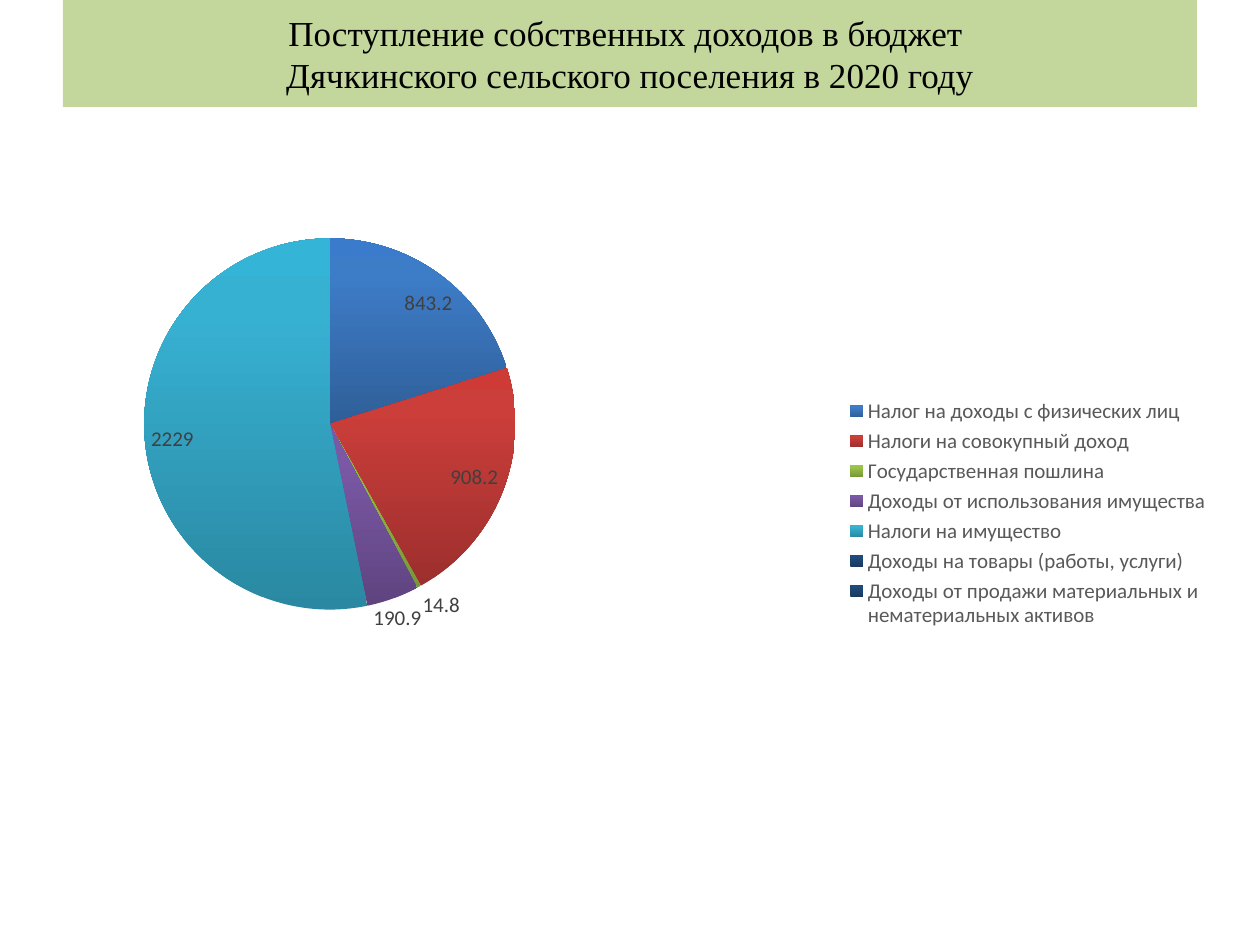
import copy

import pptx
import pptx.chart.data
import pptx.dml.color
import pptx.enum.chart
import pptx.enum.shapes
import pptx.enum.text
import pptx.oxml
import pptx.oxml.ns
import pptx.util

RGBColor = pptx.dml.color.RGBColor
PX = 914400 // 126

BLACK = RGBColor(0x00, 0x00, 0x00)
BANNER_GREEN = RGBColor(0xC3, 0xD6, 0x9B)
LABEL_GRAY = RGBColor(0x40, 0x40, 0x40)
LEGEND_GRAY = RGBColor(0x59, 0x59, 0x59)

# Each gradient runs from the bottom of the slice to its top.
BLUE = (RGBColor(0x2F, 0x5F, 0x99), RGBColor(0x3D, 0x7C, 0xC7), RGBColor(0x3A, 0x7C, 0xCB))
RED = (RGBColor(0x9C, 0x2F, 0x2D), RGBColor(0xCB, 0x3E, 0x3A), RGBColor(0xCE, 0x3B, 0x37))
GREEN = (RGBColor(0x77, 0x97, 0x37), RGBColor(0x9B, 0xC3, 0x48), RGBColor(0x9D, 0xC7, 0x46))
PURPLE = (RGBColor(0x5F, 0x44, 0x80), RGBColor(0x7B, 0x58, 0xA6), RGBColor(0x7C, 0x57, 0xA8))
CYAN = (RGBColor(0x2A, 0x88, 0xA2), RGBColor(0x37, 0xB1, 0xD2), RGBColor(0x34, 0xB4, 0xD6))
NAVY = (RGBColor(0x19, 0x39, 0x5F), RGBColor(0x20, 0x4A, 0x7C), RGBColor(0x1E, 0x4A, 0x7E))
STOP_POSITIONS = (0, 0.8, 1)

TITLE_LINES = (
    "Поступление собственных доходов в бюджет ",
    "Дячкинского сельского поселения в 2020 году",
)
INCOME = [
    ("Налог на доходы с физических лиц", 843.2, BLUE),
    ("Налоги на совокупный доход", 908.2, RED),
    ("Государственная пошлина ", 14.8, GREEN),
    ("Доходы от использования имущества", 190.9, PURPLE),
    ("Налоги на имущество", 2229, CYAN),
    ("Доходы на товары (работы, услуги)", 0, NAVY),
    ("Доходы от продажи материальных и \nнематериальных активов", None, NAVY),
]


def px(*lengths):
    return [n * PX for n in lengths]


def set_font(font, name, size, color):
    font.name = name
    font.size = pptx.util.Pt(size)
    font.color.rgb = color


def add_title(slide, lines):
    sp = slide.shapes.add_shape(
        pptx.enum.shapes.MSO_SHAPE.RECTANGLE, *px(63, 0, 1134, 107))
    sp.shadow.inherit = False
    sp.fill.solid()
    sp.fill.fore_color.rgb = BANNER_GREEN
    sp.line.fill.background()
    tf = sp.text_frame
    tf.vertical_anchor = pptx.enum.text.MSO_ANCHOR.MIDDLE
    p = tf.paragraphs[0]
    p.text = "\v".join(lines)
    p.alignment = pptx.enum.text.PP_ALIGN.CENTER
    set_font(p.font, "Times New Roman", 20, BLACK)


def fill_gradient(fill, colors):
    fill.gradient()
    fill.gradient_angle = 90
    first = fill.gradient_stops[0]._gs
    first.addnext(copy.deepcopy(first))
    for stop, position, color in zip(fill.gradient_stops, STOP_POSITIONS, colors):
        stop.position = position
        stop.color.rgb = color


def set_plot_layout(chart, x, y, w, h):
    """Place the inner plot area, in fractions of the chart."""
    plot_area = chart._chartSpace.chart.plotArea
    for old in plot_area.findall(pptx.oxml.ns.qn("c:layout")):
        plot_area.remove(old)
    values = (("layoutTarget", "inner"), ("xMode", "edge"), ("yMode", "edge"),
              ("x", x), ("y", y), ("w", w), ("h", h))
    items = "".join(f'<c:{tag} val="{val}"/>' for tag, val in values)
    plot_area.insert(0, pptx.oxml.parse_xml(
        f'<c:layout {pptx.oxml.ns.nsdecls("c")}>'
        f"<c:manualLayout>{items}</c:manualLayout></c:layout>"))


def add_income_pie(slide, income):
    data = pptx.chart.data.CategoryChartData()
    data.categories = [name for name, _, _ in income]
    data.add_series("Series 1", [value for _, value, _ in income])
    chart = slide.shapes.add_chart(
        pptx.enum.chart.XL_CHART_TYPE.PIE, *px(63, 107, 1160, 813), data).chart
    chart.has_title = False
    set_font(chart.font, "Calibri", 10, BLACK)
    set_plot_layout(chart, 0.07, 0.12, 0.32, 0.54)

    chart.has_legend = True
    chart.legend.position = pptx.enum.chart.XL_LEGEND_POSITION.RIGHT
    chart.legend.include_in_layout = False
    set_font(chart.legend.font, "Calibri", 12, LEGEND_GRAY)

    plot = chart.plots[0]
    plot.vary_by_categories = True
    series = plot.series[0]
    for i, (_, _, colors) in enumerate(income):
        fmt = series.points[i].format
        fill_gradient(fmt.fill, colors)
        fmt.line.fill.background()

    labels = series.data_labels
    labels.show_value = True
    labels.position = pptx.enum.chart.XL_LABEL_POSITION.BEST_FIT
    labels.number_format = '[=0]"";General'
    labels.number_format_is_linked = False
    set_font(labels.font, "Calibri", 12, LABEL_GRAY)


def main():
    prs = pptx.Presentation()
    prs.slide_width = pptx.util.Inches(10)
    prs.slide_height = pptx.util.Inches(7.5)
    slide = prs.slides.add_slide(prs.slide_layouts[6])
    add_title(slide, TITLE_LINES)
    add_income_pie(slide, INCOME)
    prs.save("out.pptx")


if __name__ == "__main__":
    main()
